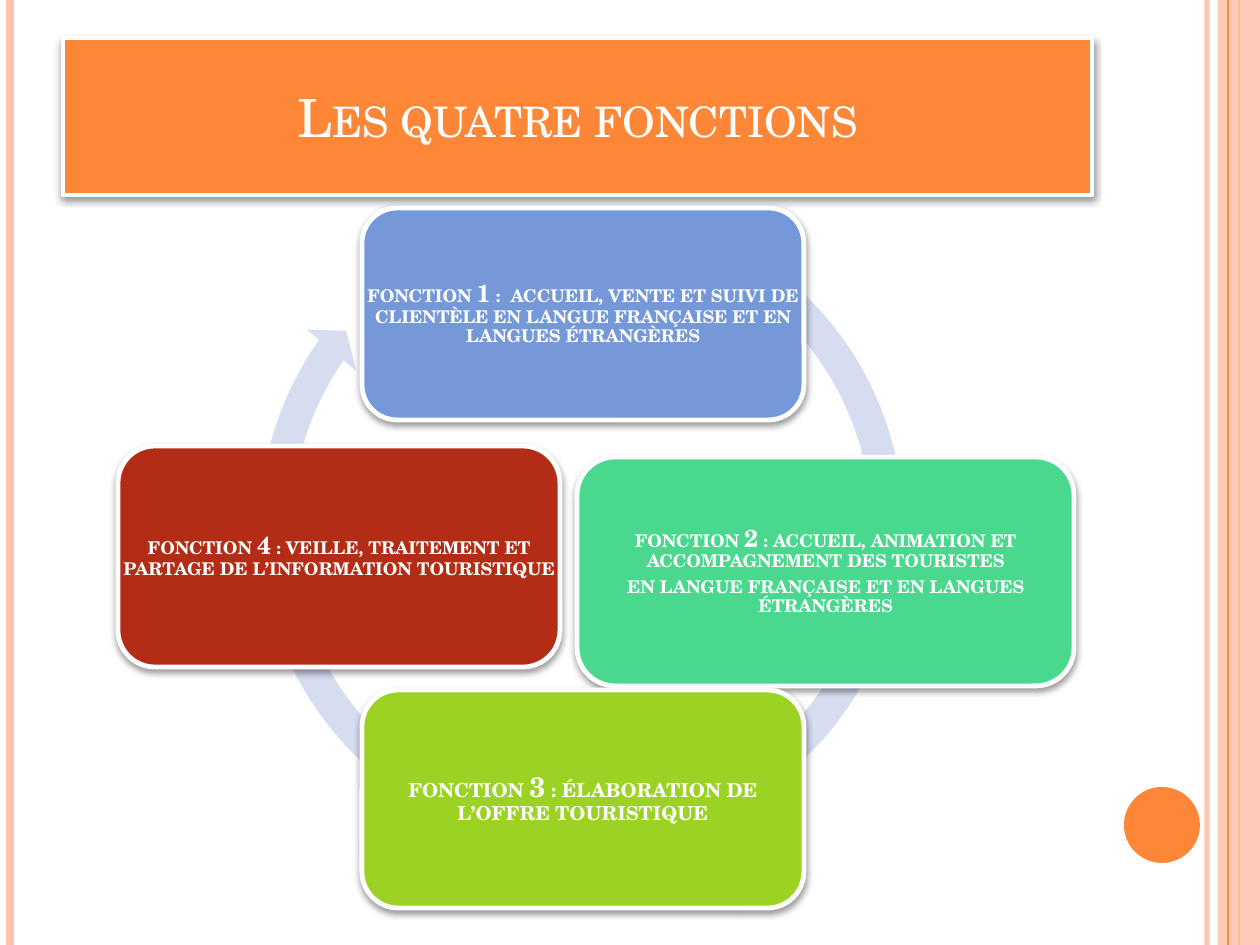
"""Build the slide showing the four functions as a cycle."""
from lxml.etree import SubElement
from pptx import Presentation
from pptx.dml.color import RGBColor
from pptx.enum.shapes import MSO_CONNECTOR as Connector, MSO_SHAPE as Shape
from pptx.enum.text import MSO_ANCHOR as Anchor, PP_ALIGN as Align
from pptx.oxml.ns import qn
from pptx.util import Emu, Pt

PX = 914400 / 126
WIDTH, HEIGHT = 1260, 945
FONT = "TeX Gyre Schola"
WHITE, ORANGE, PEACH, PALE_BLUE = "FFFFFF", "FE8637", "FEC3AE", "D6DDF1"

TITLE = "Les quatre fonctions"
TITLE_BOX = (63, 38, 1029, 157)
BARS = [(1207, PEACH, 3, 93), (10, PEACH, 4.5, 100), (1239, ORANGE, 1.5, 100)]
THIN_BAR = (1228, ORANGE, 0.75, 100)
BAND = (1218, 0, 42, HEIGHT)
DISC = (1124, 787, 76, 76)
ARROW_BOX = (243, 188, 677, 677)
ARROW_ADJUSTMENTS = [0.047, 2.729, 129.105, 179.771, 0.048]

FUNCTIONS = [
    {"box": (362, 208, 442, 212), "color": "7598D9", "sizes": (10, 14), "margin": 5,
     "text": [" :  ACCUEIL, VENTE ET SUIVI DE CLIENTÈLE EN LANGUE FRANÇAISE "
              "ET EN LANGUES ÉTRANGÈRES"]},
    {"box": (577, 457, 497, 229), "color": "4AD78E", "sizes": (10, 14), "margin": 5,
     "text": [" : ACCUEIL, ANIMATION ET ACCOMPAGNEMENT DES TOURISTES",
              "EN LANGUE FRANÇAISE ET EN LANGUES ÉTRANGÈRES"]},
    {"box": (362, 690, 442, 218), "color": "9CD224", "sizes": (11, 16), "margin": 6,
     "text": [" : ÉLABORATION DE L’OFFRE TOURISTIQUE"]},
    {"box": (118, 446, 442, 221), "color": "B32C16", "sizes": (10, 14), "margin": 5,
     "text": [" : VEILLE, TRAITEMENT ET PARTAGE DE L’INFORMATION TOURISTIQUE"]},
]


def px(value):
    return Emu(round(value * PX))


def rgb(color):
    return RGBColor.from_string(color)


def set_format(target, **values):
    for name, value in values.items():
        setattr(target, name, value)


def place(shape, box):
    set_format(shape, **dict(zip(("left", "top", "width", "height"), map(px, box))))


def set_opacity(properties, percent):
    color = next(properties.iter(qn("a:srgbClr")))
    SubElement(color, qn("a:alpha"), val=str(percent * 1000))


def add_shadow(shape):
    effects = SubElement(shape._element.spPr, qn("a:effectLst"))
    shadow = SubElement(effects, qn("a:outerShdw"), blurRad=str(Pt(4)), dist=str(Pt(2)),
                        dir="5400000", rotWithShape="0")
    color = SubElement(shadow, qn("a:srgbClr"), val="000000")
    SubElement(color, qn("a:alpha"), val="40000")


def paint(shape, color, framed=False):
    shape.fill.solid()
    shape.fill.fore_color.rgb = rgb(color)
    if framed:
        shape.line.color.rgb = rgb(WHITE)
        shape.line.width = Pt(2.75)
        add_shadow(shape)
    else:
        shape.line.fill.background()
        shape.shadow.inherit = False


def add_painted(slide, kind, box, color):
    shape = slide.shapes.add_shape(kind, *map(px, box))
    paint(shape, color)
    return shape


def add_bar(slide, x, color, width, opacity):
    bar = slide.shapes.add_connector(Connector.STRAIGHT, px(x), 0, px(x), px(HEIGHT))
    bar.line.color.rgb = rgb(color)
    bar.line.width = Pt(width)
    properties = bar._element.spPr
    if opacity < 100:
        set_opacity(properties, opacity)
    SubElement(properties, qn("a:effectLst"))


def add_run(paragraph, text, size, bold):
    run = paragraph.add_run()
    run.text = text
    set_format(run.font, name=FONT, size=Pt(size), bold=bold)
    run.font.color.rgb = rgb(WHITE)
    return run


def add_title(slide):
    title = slide.shapes.title
    place(title, TITLE_BOX)
    geometry = SubElement(title._element.spPr, qn("a:prstGeom"), prst="snip1Rect")
    guides = SubElement(geometry, qn("a:avLst"))
    SubElement(guides, qn("a:gd"), name="adj", fmla="val 0")
    paint(title, ORANGE, framed=True)
    title.text_frame.vertical_anchor = Anchor.MIDDLE
    paragraph = title.text_frame.paragraphs[0]
    paragraph.alignment = Align.CENTER
    run = add_run(paragraph, TITLE, 30, False)
    run._r.get_or_add_rPr().set("cap", "small")


def add_function(slide, number, function):
    box = function["box"]
    card = slide.shapes.add_shape(Shape.ROUNDED_RECTANGLE, *map(px, box))
    paint(card, function["color"], framed=True)
    frame = slide.shapes.add_textbox(*map(px, box)).text_frame
    margin = px(function["margin"])
    set_format(frame, word_wrap=True, vertical_anchor=Anchor.MIDDLE, margin_left=margin,
               margin_right=margin, margin_top=margin, margin_bottom=margin)
    small, large = function["sizes"]
    for index, text in enumerate(function["text"]):
        paragraph = frame.add_paragraph() if index else frame.paragraphs[0]
        set_format(paragraph, alignment=Align.CENTER, line_spacing=0.9, space_after=Pt(4))
        if index == 0:
            add_run(paragraph, "FONCTION ", small, True)
            add_run(paragraph, str(number), large, True)
        add_run(paragraph, text, small, True)


def main():
    presentation = Presentation()
    set_format(presentation, slide_width=px(WIDTH), slide_height=px(HEIGHT))
    slide = presentation.slides.add_slide(presentation.slide_layouts[5])
    for bar in BARS:
        add_bar(slide, *bar)
    band = add_painted(slide, Shape.RECTANGLE, BAND, PEACH)
    set_opacity(band._element.spPr, 87)
    add_bar(slide, *THIN_BAR)
    add_painted(slide, Shape.OVAL, DISC, ORANGE)
    add_title(slide)
    arrow = add_painted(slide, Shape.CIRCULAR_ARROW, ARROW_BOX, PALE_BLUE)
    for index, value in enumerate(ARROW_ADJUSTMENTS):
        arrow.adjustments[index] = value
    for number, function in enumerate(FUNCTIONS, 1):
        add_function(slide, number, function)
    presentation.save("out.pptx")


if __name__ == "__main__":
    main()
